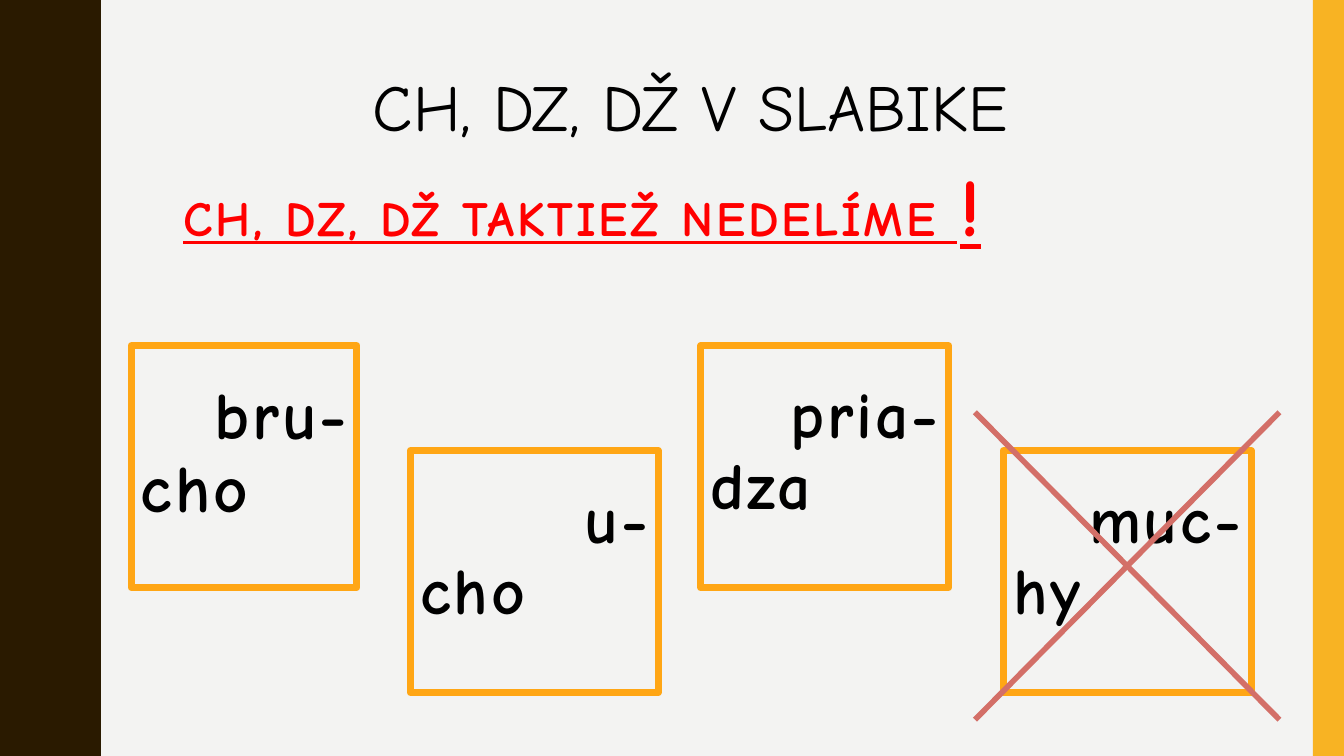
from math import cos, pi

from lxml.etree import SubElement
from pptx import Presentation
from pptx.dml.color import RGBColor
from pptx.enum.shapes import MSO_CONNECTOR, MSO_SHAPE
from pptx.enum.text import MSO_ANCHOR, PP_ALIGN
from pptx.oxml.ns import qn
from pptx.util import Inches, Pt

WIDTH, HEIGHT = 13.33, 7.5
PAPER = RGBColor(0xF3, 0xF3, 0xF2)
BROWN = RGBColor(0x2A, 0x1A, 0x00)
YELLOW = RGBColor(0xF8, 0xB3, 0x23)
ORANGE = RGBColor(0xFF, 0xA6, 0x15)
ROSE = RGBColor(0xD3, 0x6F, 0x68)
RED = RGBColor(0xFF, 0x00, 0x00)
BLACK = RGBColor(0x00, 0x00, 0x00)

WAVE_PERIOD = HEIGHT / 5
WAVE_STEPS = 24
TOP_ROW, LOW_ROW = 3.43, 4.47
CARD_HEIGHT = 2.4
# left, top, width, text size, first syllable, second syllable
CARDS = [
    (1.3, TOP_ROW, 2.24, 47.8, "bru-", "cho"),
    (4.07, LOW_ROW, 2.46, 46.8, "u-", "cho"),
    (6.95, TOP_ROW, 2.46, 46.8, "pria-", "dza"),
    (9.95, LOW_ROW, 2.46, 46.8, "muc-", "hy"),
]


class SlideBuilder:
    font_name = "Comic Neue"

    def __init__(self, slide):
        self.slide = slide
        self.shapes = slide.shapes
        slide.background.fill.solid()
        slide.background.fill.fore_color.rgb = PAPER

    def wavy_edge(self, trough, crest):
        """Fill the left side up to a wave that swings between two x values."""
        middle, swing = (trough + crest) / 2, (crest - trough) / 2
        outline = []
        for step in range(5 * WAVE_STEPS + 1):
            wave = cos(2 * pi * step / WAVE_STEPS)
            outline.append((middle - swing * wave, step * WAVE_PERIOD / WAVE_STEPS))
        builder = self.shapes.build_freeform(0, 0, scale=Inches(1))
        builder.add_line_segments(outline + [(0, HEIGHT)], close=True)
        self.paint(builder.convert_to_shape(), BROWN)

    def bar(self, left, width):
        band = self.shapes.add_shape(
            MSO_SHAPE.RECTANGLE, Inches(left), 0, Inches(width), Inches(HEIGHT))
        self.paint(band, YELLOW)

    def paint(self, area, color):
        area.shadow.inherit = False
        area.fill.solid()
        area.fill.fore_color.rgb = color
        area.line.fill.background()

    def text(self, left, top, width, height, anchor):
        """Add a wrapping text box and return its first paragraph."""
        frame = self.shapes.add_textbox(
            Inches(left), Inches(top), Inches(width), Inches(height)).text_frame
        frame.word_wrap = True
        frame.vertical_anchor = anchor
        return frame.paragraphs[0]

    def style(self, paragraph, size, color, bold, spacing, align=PP_ALIGN.LEFT):
        paragraph.alignment = align
        paragraph.line_spacing = spacing
        font = paragraph.font
        font.name, font.size, font.bold = self.font_name, Pt(size), bold
        font.color.rgb = color

    def track(self, paragraph, points=2):
        """Widen the letter spacing of every run."""
        for run in paragraph.runs:
            run.font._element.set("spc", str(points * 100))

    def title(self, wording):
        heading = self.text(1.08, 0.51, 11.75, 0.98, MSO_ANCHOR.BOTTOM)
        heading.text = wording
        self.style(heading, 46.8, BLACK, False, 0.9, PP_ALIGN.CENTER)

    def rule(self, wording, mark):
        statement = self.text(1.72, 1.67, 10.68, 0.98, MSO_ANCHOR.TOP)
        statement.add_run().text = wording
        exclamation = statement.add_run()
        exclamation.text = mark
        exclamation.font.size = Pt(58.5)
        self.style(statement, 35.1, RED, True, 0.8)
        statement.font.underline = True
        self.track(statement)

    def card(self, left, top, width, size, first, second):
        frame_box = self.shapes.add_shape(
            MSO_SHAPE.RECTANGLE, Inches(left), Inches(top),
            Inches(width), Inches(CARD_HEIGHT))
        frame_box.shadow.inherit = False
        frame_box.fill.background()
        frame_box.line.color.rgb = ORANGE
        frame_box.line.width = Pt(5)
        SubElement(frame_box.line._get_or_add_ln(), qn("a:round"))
        frame = frame_box.text_frame
        frame.word_wrap = True
        frame.vertical_anchor = MSO_ANCHOR.TOP
        frame.margin_top = Inches(0.36)
        syllables = [(frame.paragraphs[0], first, PP_ALIGN.RIGHT),
                     (frame.add_paragraph(), second, PP_ALIGN.LEFT)]
        for paragraph, syllable, align in syllables:
            paragraph.text = syllable
            self.style(paragraph, size, BLACK, True, 0.9, align)
            self.track(paragraph)

    def cross(self, left, top, right, bottom):
        for start, end in ((left, right), (right, left)):
            stroke = self.shapes.add_connector(
                MSO_CONNECTOR.STRAIGHT, Inches(start), Inches(top),
                Inches(end), Inches(bottom))
            stroke.line.color.rgb = ROSE
            stroke.line.width = Pt(4)
            SubElement(stroke._element.spPr, qn("a:effectLst"))


def main():
    deck = Presentation()
    deck.slide_width, deck.slide_height = Inches(WIDTH), Inches(HEIGHT)
    page = SlideBuilder(deck.slides.add_slide(deck.slide_layouts[6]))
    page.wavy_edge(0.78, 0.97)
    page.bar(13.02, 0.31)
    page.title("CH, DZ, DŽ V SLABIKE ")
    page.rule("CH, DZ, DŽ TAKTIEŽ NEDELÍME ", "!")
    for card in CARDS:
        page.card(*card)
    page.cross(9.67, 4.09, 12.69, 7.14)
    deck.save("out.pptx")


if __name__ == "__main__":
    main()
